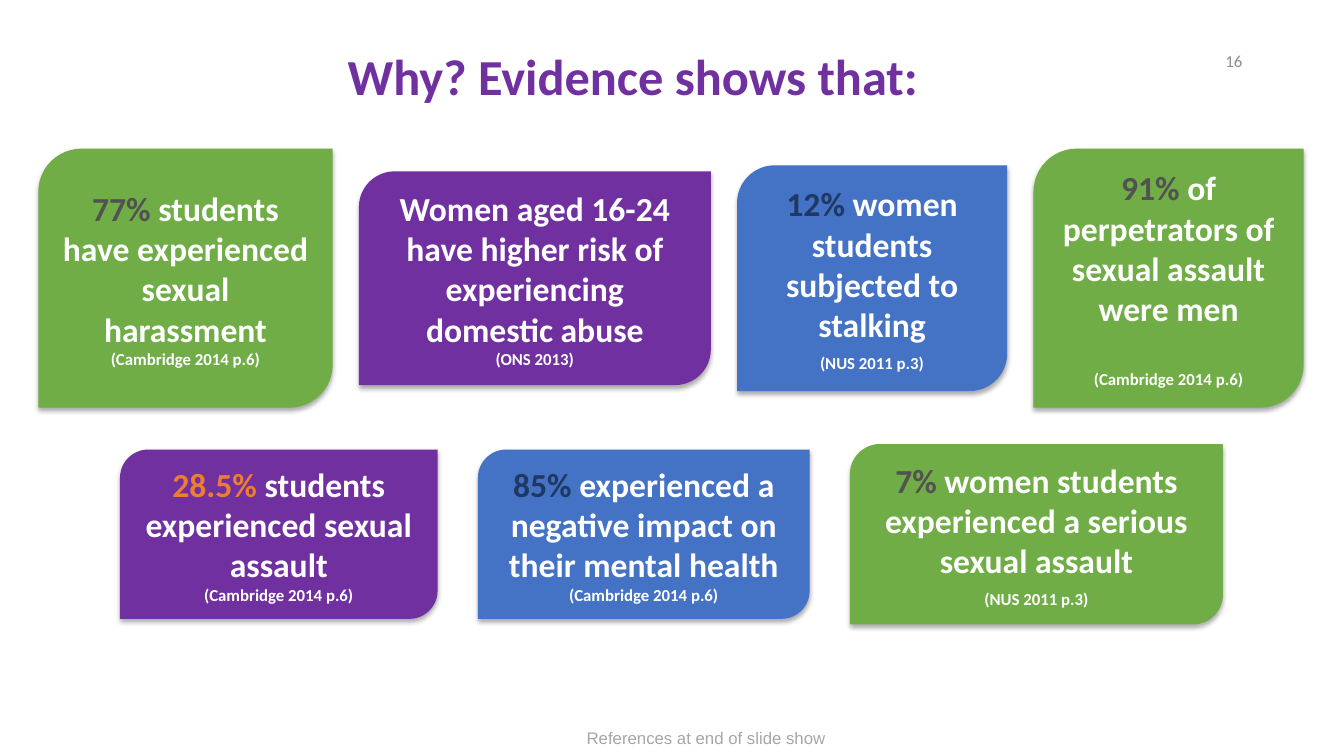
from dataclasses import dataclass

from lxml.etree import SubElement
from pptx import Presentation
from pptx.dml.color import RGBColor
from pptx.enum.shapes import MSO_SHAPE
from pptx.enum.text import MSO_ANCHOR, PP_ALIGN
from pptx.oxml.ns import qn
from pptx.util import Inches, Pt


@dataclass(frozen=True)
class Theme:
    purple: str = "7030A0"
    green: str = "70AD47"
    blue: str = "4472C4"
    orange: str = "ED7D31"
    charcoal: str = "525252"
    navy: str = "203864"
    white: str = "FFFFFF"
    number_gray: str = "8C8C8C"
    note_gray: str = "A6A6A6"
    shadow: str = "000000"
    heading_font: str = "Calibri"
    note_font: str = "Arial"
    title_size: int = 36
    claim_size: int = 24
    small_size: int = 12


THEME = Theme()

FIRST_ROW = [
    (2.92, 2.57, THEME.green, THEME.charcoal, "77% ",
     "students have experienced sexual harassment", "(Cambridge 2014 p.6)", 0),
    (3.49, 2.12, THEME.purple, THEME.white, "",
     "Women aged 16-24 have higher risk of experiencing domestic abuse", "(ONS 2013)", 0),
    (2.68, 2.24, THEME.blue, THEME.navy, "12% ",
     "women students subjected to stalking", "(NUS 2011 p.3)", 6),
    (2.68, 2.57, THEME.green, THEME.charcoal, "91% ",
     "of perpetrators of sexual assault were men", "(Cambridge 2014 p.6)", 29),
]
SECOND_ROW = [
    (3.15, 1.68, THEME.purple, THEME.orange, "28.5% ",
     "students experienced sexual assault", "(Cambridge 2014 p.6)", 0),
    (3.29, 1.68, THEME.blue, THEME.navy, "85% ",
     "experienced a negative impact on their mental health", "(Cambridge 2014 p.6)", 0),
    (3.7, 1.79, THEME.green, THEME.charcoal, "7% ",
     "women students experienced a serious sexual assault", "(NUS 2011 p.3)", 6),
]


def add_span(para, text, color, size, bold=False, font=THEME.heading_font):
    span = para.add_run()
    span.text = text
    for name, value in {"name": font, "size": Pt(size), "bold": bold}.items():
        setattr(span.font, name, value)
    span.font.color.rgb = RGBColor.from_string(color)


def add_soft_shadow(shape):
    shape.shadow.inherit = False
    effects = shape.element.spPr.find(qn("a:effectLst"))
    outer = SubElement(effects, qn("a:outerShdw"), {
        "blurRad": str(Pt(3.5)), "dist": str(Pt(2.2)), "dir": "5400000",
        "algn": "ctr", "rotWithShape": "0"})
    color = SubElement(outer, qn("a:srgbClr"), {"val": THEME.shadow})
    SubElement(color, qn("a:alpha"), {"val": "32000"})


def add_label(page, box, text, color, size, alignment=PP_ALIGN.LEFT,
              anchor=MSO_ANCHOR.TOP, **style):
    frame = page.shapes.add_textbox(*map(Inches, box)).text_frame
    frame.word_wrap = True
    frame.vertical_anchor = anchor
    para = frame.paragraphs[0]
    para.alignment = alignment
    add_span(para, text, color, size, **style)


def add_card(page, box, fill, accent, figure, claim, citation, gap):
    card = page.shapes.add_shape(MSO_SHAPE.ROUND_2_DIAG_RECTANGLE, *map(Inches, box))
    card.fill.solid()
    card.fill.fore_color.rgb = RGBColor.from_string(fill)
    card.line.fill.background()
    add_soft_shadow(card)
    frame = card.text_frame
    frame.word_wrap = True
    frame.vertical_anchor = MSO_ANCHOR.MIDDLE
    claim_para = frame.paragraphs[0]
    claim_para.alignment = PP_ALIGN.CENTER
    if figure:
        add_span(claim_para, figure, accent, THEME.claim_size, bold=True)
    add_span(claim_para, claim, THEME.white, THEME.claim_size, bold=True)
    citation_para = frame.add_paragraph()
    citation_para.alignment = PP_ALIGN.CENTER
    citation_para.space_before = Pt(gap)
    add_span(citation_para, citation, THEME.white, THEME.small_size, bold=True)


def add_card_row(page, left, middle, gap, cards):
    for width, height, *content in cards:
        add_card(page, (left, middle - height / 2, width, height), *content)
        left += width + gap


def add_evidence_page(deck):
    page = deck.slides.add_slide(deck.slide_layouts[6])
    add_label(page, (3.35, 0.4, 6.03, 0.71), "Why? Evidence shows that:",
              THEME.purple, THEME.title_size, bold=True)
    add_card_row(page, 0.38, 2.76, 0.26, FIRST_ROW)
    add_card_row(page, 1.19, 5.3, 0.4, SECOND_ROW)
    add_label(page, (5.72, 7.17, 2.84, 0.3), "References at end of slide show",
              THEME.note_gray, THEME.small_size, font=THEME.note_font)
    add_label(page, (9.42, 0.4, 3, 0.4), "16", THEME.number_gray, THEME.small_size,
              PP_ALIGN.RIGHT, MSO_ANCHOR.MIDDLE)


def main():
    deck = Presentation()
    deck.slide_width = Inches(13.33)
    deck.slide_height = Inches(7.5)
    add_evidence_page(deck)
    deck.save("out.pptx")


if __name__ == "__main__":
    main()
